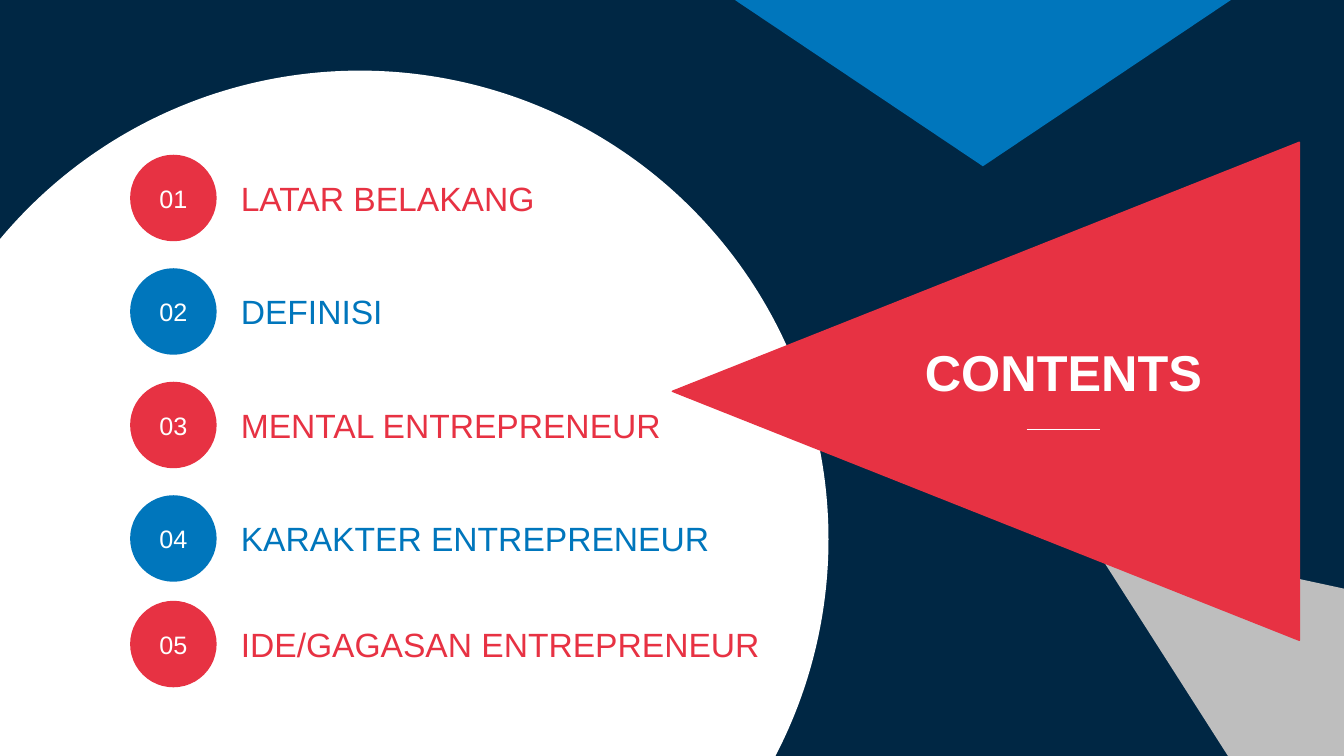
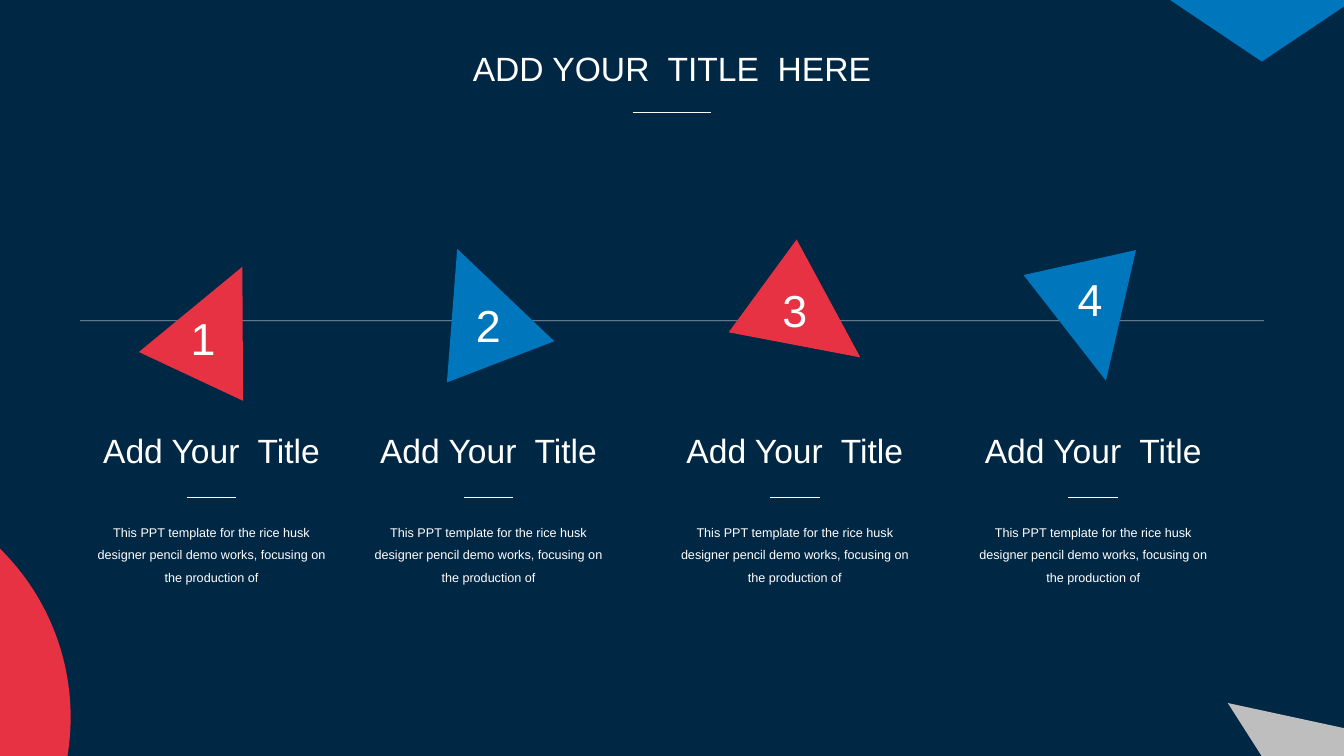
from lxml import etree
from pptx import Presentation
from pptx.dml.color import RGBColor
from pptx.enum import shapes, text
from pptx.oxml.ns import qn
from pptx.util import Cm, Pt

NAVY, WHITE, RED, BLUE, GREY = "002744", "FFFFFF", "E73243", "0076BC", "BEBEBE"
FONT = "Arial"
SLIDE_W, SLIDE_H = 33.87, 19.05
OVAL = shapes.MSO_SHAPE.OVAL
TRIANGLE = shapes.MSO_SHAPE.ISOSCELES_TRIANGLE
LEFT, CENTER = text.PP_ALIGN.LEFT, text.PP_ALIGN.CENTER

BADGE_X, BADGE_SIZE = 3.28, 2.18
ITEM_X, ITEM_H = 5.82, 1.28
# badge top, label width, label
ITEMS = [
    (3.9, 11.13, "LATAR BELAKANG"),
    (6.76, 11.13, "DEFINISI"),
    (9.62, 11.13, "MENTAL ENTREPRENEUR"),
    (12.48, 13.28, "KARAKTER ENTREPRENEUR"),
    (15.14, 13.97, "IDE/GAGASAN ENTREPRENEUR"),
]

# column centre, triangle corner, triangle rotation, number corner
STEPS = [
    (5.33, (4.01, 6.58), 25.1, (3.94, 7.7)),
    (12.31, (10.62, 6.17), 339, (11.13, 7.37)),
    (20.03, (19, 6.58), 126.2, (18.85, 6.99)),
    (27.55, (26.09, 6.58), 167.5, (26.29, 6.73)),
]
STEP_TITLE = "Add Your  Title"
STEP_BODY = ("This PPT template for the rice husk designer pencil demo works, "
             "focusing on the production of")


def rgb(color):
    return RGBColor.from_string(color)


def alternate(index):
    return BLUE if index % 2 else RED


def write(tf, content, size, color, align=CENTER, bold=False, spacing=None):
    p = tf.paragraphs[0]
    p.text = content
    p.alignment = align
    p.line_spacing = spacing
    p.font.name = FONT
    p.font.size = Pt(size)
    p.font.bold = bold
    p.font.color.rgb = rgb(color)


def add_text(s, x, y, w, h, content, size, color=WHITE, **style):
    tf = s.shapes.add_textbox(Cm(x), Cm(y), Cm(w), Cm(h)).text_frame
    tf.word_wrap = True
    tf.auto_size = text.MSO_AUTO_SIZE.SHAPE_TO_FIT_TEXT
    write(tf, content, size, color, **style)


def add_shape(s, kind, x, y, w, h, color, rotation=0):
    sp = s.shapes.add_shape(kind, Cm(x), Cm(y), Cm(w), Cm(h))
    sp.shadow.inherit = False
    sp.rotation = rotation
    sp.fill.solid()
    sp.fill.fore_color.rgb = rgb(color)
    sp.line.fill.background()
    return sp


def add_rule(s, center, y, w, opacity=None):
    """Thin white horizontal line centred on a given x."""
    line = s.shapes.add_connector(shapes.MSO_CONNECTOR.STRAIGHT, Cm(center - w / 2), Cm(y),
                                  Cm(center + w / 2), Cm(y))
    line.line.color.rgb = rgb(WHITE)
    line.line.width = Pt(0.5)
    sp_pr = line.element.spPr
    if opacity is not None:
        clr = sp_pr.find(".//" + qn("a:srgbClr"))
        etree.SubElement(clr, qn("a:alpha")).set("val", str(opacity * 1000))
    etree.SubElement(sp_pr, qn("a:effectLst"))


def add_heading(s, center, y, w, h, content, size, rule_y, rule_w, bold=False):
    """Centred title with a short rule below it."""
    add_text(s, center - w / 2, y, w, h, content, size, bold=bold)
    add_rule(s, center, rule_y, rule_w)


def add_backdrop(s, circle, circle_color, blue_corner, grey_corner):
    """Circle (left, top, diameter) and the two background triangles."""
    x, y, diameter = circle
    add_shape(s, OVAL, x, y, diameter, diameter, circle_color)
    add_shape(s, TRIANGLE, *blue_corner, 12.5, 4.19, BLUE, 180)
    add_shape(s, TRIANGLE, *grey_corner, 7.24, 8.69, GREY, 304.8)


def add_item(s, index, top, w, label):
    color = alternate(index)
    badge = add_shape(s, OVAL, BADGE_X, top, BADGE_SIZE, BADGE_SIZE, color)
    badge.text_frame.vertical_anchor = text.MSO_ANCHOR.MIDDLE
    write(badge.text_frame, f"{index + 1:02}", 18, WHITE)
    add_text(s, ITEM_X, top + (BADGE_SIZE - ITEM_H) / 2, w, ITEM_H, label, 24, color,
             align=LEFT)


def add_step(s, index, center, corner, rotation, number_corner):
    add_shape(s, TRIANGLE, *corner, 2.9, 3.05, alternate(index), rotation)
    add_text(s, *number_corner, 2.36, 1.63, str(index + 1), 32)
    add_heading(s, center, 10.72, 7.52, 1.27, STEP_TITLE, 24, 12.52, 1.25)
    add_text(s, center - 3.32, 12.9, 6.64, 1.9, STEP_BODY, 9, spacing=1.5)


def build_contents(s):
    add_backdrop(s, (-2.74, 1.78, 23.62), WHITE, (18.52, 0), (27.3, 11.56))
    panel = add_shape(s, TRIANGLE, 18.57, 1.96, 12.55, 15.8, RED, 270)
    panel.line.color.rgb = rgb(RED)
    panel.line.width = Pt(1)
    add_heading(s, 26.8, 8.48, 8.33, 1.8, "CONTENTS", 36, 10.82, 1.86, bold=True)
    for index, item in enumerate(ITEMS):
        add_item(s, index, *item)


def build_steps(s):
    add_backdrop(s, (-10.13, 12.12, 11.91), RED, (25.55, -2.64), (30.89, 15.85))
    add_heading(s, SLIDE_W / 2, 1.09, 11.13, 1.27, "ADD YOUR  TITLE  HERE", 24, 2.82, 1.97)
    add_rule(s, SLIDE_W / 2, 8.08, 29.84, opacity=58)
    for index, step in enumerate(STEPS):
        add_step(s, index, *step)


def main():
    prs = Presentation()
    prs.slide_width, prs.slide_height = Cm(SLIDE_W), Cm(SLIDE_H)
    fill = prs.slide_master.background.fill
    fill.solid()
    fill.fore_color.rgb = rgb(NAVY)
    for build in (build_contents, build_steps):
        build(prs.slides.add_slide(prs.slide_layouts[6]))
    prs.save("out.pptx")


if __name__ == "__main__":
    main()
